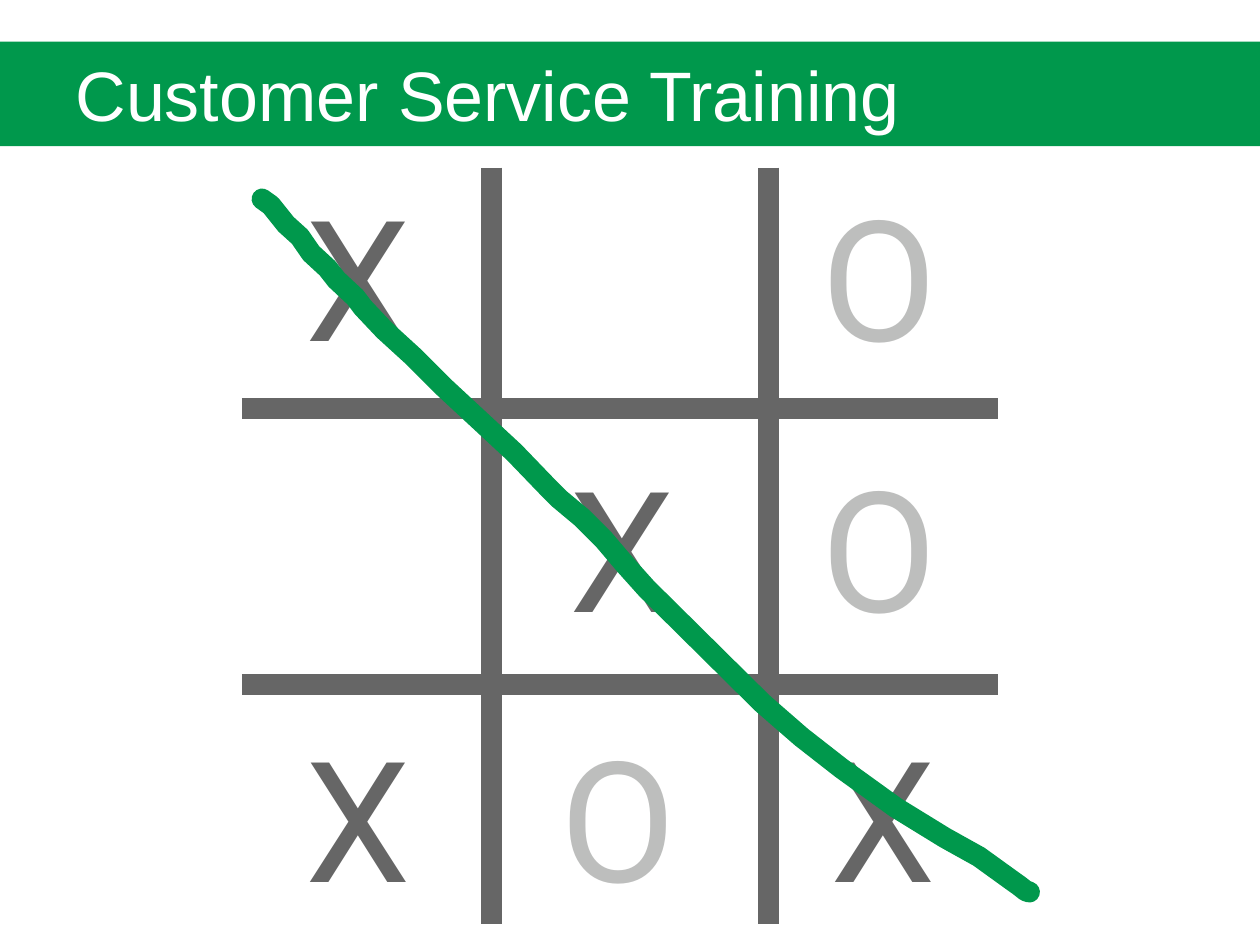
from dataclasses import dataclass

from lxml import etree
from pptx import Presentation
from pptx.dml.color import RGBColor
from pptx.enum.shapes import MSO_CONNECTOR
from pptx.enum.text import MSO_ANCHOR, MSO_AUTO_SIZE, PP_ALIGN
from pptx.oxml.ns import qn
from pptx.util import Inches, Pt

STRAIGHT = MSO_CONNECTOR.STRAIGHT
MIDDLE = MSO_ANCHOR.MIDDLE
LEFT = PP_ALIGN.LEFT
NO_AUTOFIT = MSO_AUTO_SIZE.NONE
GROW_SHAPE = MSO_AUTO_SIZE.SHAPE_TO_FIT_TEXT


@dataclass(frozen=True)
class Theme:
    green: RGBColor = RGBColor(0x00, 0x98, 0x4C)
    dark_grey: RGBColor = RGBColor(0x66, 0x66, 0x66)
    light_grey: RGBColor = RGBColor(0xBD, 0xBE, 0xBD)
    white: RGBColor = RGBColor(0xFF, 0xFF, 0xFF)
    title_font: str = "Arial"
    mark_font: str = "Roboto"
    title_size: Pt = Pt(40)
    mark_size: Pt = Pt(96)
    stroke: Pt = Pt(12)


THEME = Theme()

BOARD_LEFT, BOARD_TOP, BOARD_SIZE = 1.92, 1.33, 6
VERTICAL_BARS = (3.9, 6.1)
HORIZONTAL_BARS = (3.24, 5.43)
COLUMN_CENTRES = (2.91, 5, 7.07)
ROW_TOPS = (1.33, 3.48, 5.62)
MARK_HEIGHT = 1.72
MARK_STYLES = {"X": (1.16, THEME.dark_grey), "O": (1.3, THEME.light_grey)}
BOARD = ("X O", " XO", "XOX")

WINNING_STROKE = (
    (2.08, 1.58), (2.15, 1.63), (2.27, 1.78), (2.38, 1.88), (2.47, 2.01),
    (2.6, 2.13), (2.67, 2.22), (2.82, 2.36), (2.88, 2.44), (3.05, 2.62),
    (3.28, 2.83), (3.52, 3.07), (3.94, 3.46), (4.08, 3.59), (4.35, 3.87),
    (4.44, 3.96), (4.62, 4.11), (4.79, 4.28), (4.96, 4.48), (5.13, 4.67),
    (6.05, 5.58), (6.36, 5.85), (6.68, 6.1), (7.11, 6.41), (7.5, 6.65),
    (7.77, 6.8), (8.02, 6.98), (8.09, 7.03), (8.14, 7.07), (8.17, 7.08),
)


def style_font(para, name, size, color):
    for span in para.runs:
        span.font.name = name
        span.font.size = size
        span.font.color.rgb = color


def add_title(page, text):
    title = page.shapes.title
    title.left, title.top = Inches(0), Inches(0.33)
    title.width, title.height = Inches(10), Inches(0.83)
    title.fill.solid()
    title.fill.fore_color.rgb = THEME.green
    frame = title.text_frame
    frame.text = text
    frame.auto_size = NO_AUTOFIT
    frame.vertical_anchor = MIDDLE
    para = frame.paragraphs[0]
    para.alignment = LEFT
    properties = para._p.get_or_add_pPr()
    properties.set("marL", str(Inches(0.5)))
    properties.set("indent", "0")
    style_font(para, THEME.title_font, THEME.title_size, THEME.white)


def add_bar(group, start, end):
    bar = group.shapes.add_connector(STRAIGHT, *map(Inches, start + end))
    bar.line.color.rgb = THEME.dark_grey
    bar.line.width = THEME.stroke
    etree.SubElement(bar._element.spPr, qn("a:effectLst"))


def add_grid(page):
    group = page.shapes.add_group_shape()
    for x in VERTICAL_BARS:
        add_bar(group, (x, BOARD_TOP), (x, BOARD_TOP + BOARD_SIZE))
    for y in HORIZONTAL_BARS:
        add_bar(group, (BOARD_LEFT, y), (BOARD_LEFT + BOARD_SIZE, y))


def add_mark(page, mark, centre, top):
    width, color = MARK_STYLES[mark]
    box = page.shapes.add_textbox(
        Inches(centre - width / 2), Inches(top), Inches(width), Inches(MARK_HEIGHT)
    )
    frame = box.text_frame
    frame.text = mark
    frame.word_wrap = False
    frame.auto_size = GROW_SHAPE
    style_font(frame.paragraphs[0], THEME.mark_font, THEME.mark_size, color)


def add_marks(page):
    for row, top in zip(BOARD, ROW_TOPS):
        for mark, centre in zip(row, COLUMN_CENTRES):
            if mark in MARK_STYLES:
                add_mark(page, mark, centre, top)


def add_winning_stroke(page):
    """Draw the open line through the winning marks, with round ends and joins."""
    start, *rest = [(Inches(x), Inches(y)) for x, y in WINNING_STROKE]
    builder = page.shapes.build_freeform(*start)
    builder.add_line_segments(rest, close=False)
    stroke = builder.convert_to_shape()
    stroke.shadow.inherit = False
    stroke.fill.background()
    stroke.line.color.rgb = THEME.green
    stroke.line.width = THEME.stroke
    outline = stroke.line._get_or_add_ln()
    outline.set("cap", "rnd")
    etree.SubElement(outline, qn("a:round"))


def main():
    deck = Presentation()
    deck.slide_width, deck.slide_height = Inches(10), Inches(7.5)
    page = deck.slides.add_slide(deck.slide_layouts.get_by_name("Title Only"))
    add_title(page, "Customer Service Training")
    add_grid(page)
    add_marks(page)
    add_winning_stroke(page)
    deck.save("out.pptx")


if __name__ == "__main__":
    main()
